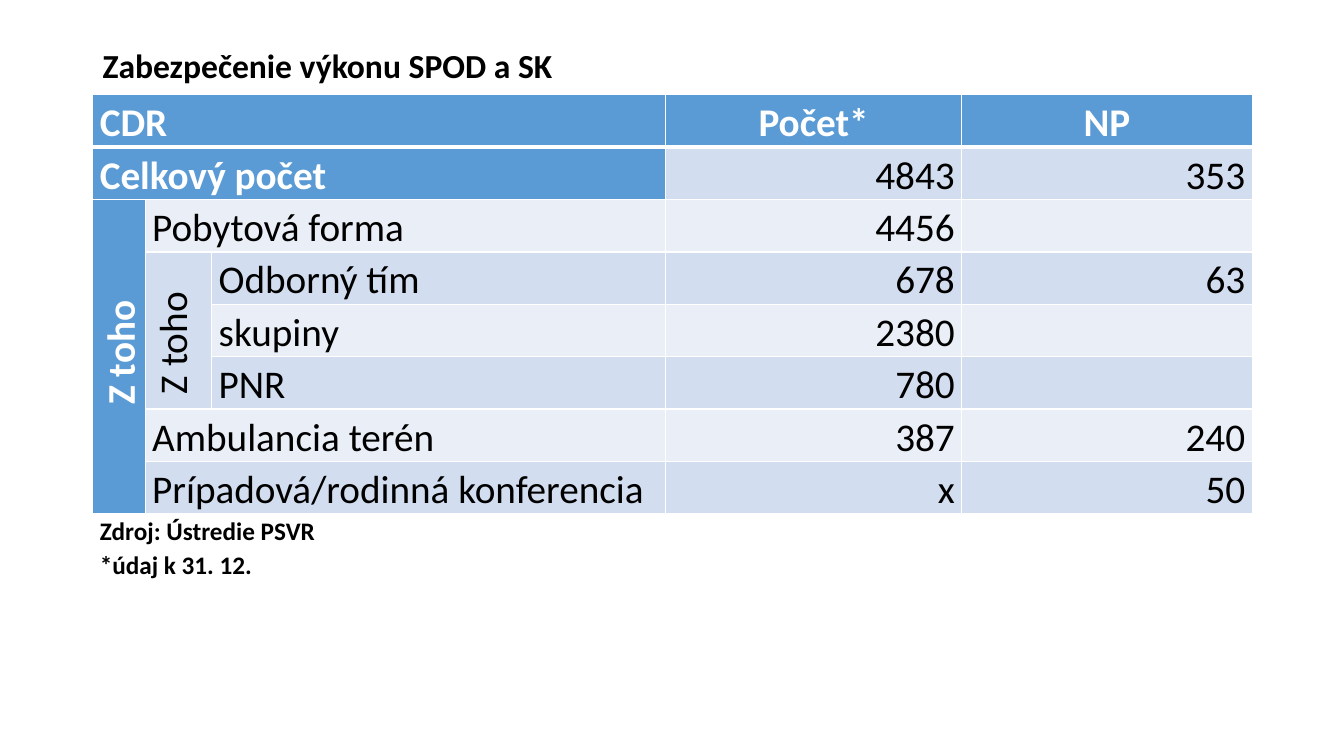
from lxml.etree import SubElement as Sub
from pptx import Presentation
from pptx.dml.color import RGBColor as RGB
from pptx.enum.text import MSO_ANCHOR as Anchor, PP_ALIGN as Align
from pptx.oxml.ns import qn
from pptx.util import Inches, Pt

BLACK = RGB(0x00, 0x00, 0x00)
WHITE = RGB(0xFF, 0xFF, 0xFF)
BLUE = RGB(0x5B, 0x9B, 0xD5)
DARK = RGB(0xD2, 0xDE, 0xEF)
LIGHT = RGB(0xEA, 0xEF, 0xF7)

LEFT, WIDTH = 0.92, 11.5
COLS = [0.52, 0.66, 4.5, 2.94, 2.88]
ROWS = [0.52] * 8 + [1.18]
# Row labels: row, column, text, rows down, columns across
LABELS = [
    (0, 0, "CDR", 1, 3),
    (1, 0, "Celkový počet", 1, 3),
    (2, 0, "Z toho", 6, 1),
    (2, 1, "Pobytová forma", 1, 2),
    (3, 1, "Z toho", 3, 1),
    (3, 2, "Odborný tím", 1, 1),
    (4, 2, "skupiny", 1, 1),
    (5, 2, "PNR", 1, 1),
    (6, 1, "Ambulancia terén", 1, 2),
    (7, 1, "Prípadová/rodinná konferencia", 1, 2),
]
COUNTS = [("Počet*", "NP"), ("4843", "353"), ("4456", ""), ("678", "63"),
          ("2380", ""), ("780", ""), ("387", "240"), ("x", "50")]
NOTES = ["Zdroj: Ústredie PSVR", "*údaj k 31. 12."]


class Deck:
    font = "Calibri"

    def __init__(self):
        self.prs = Presentation()
        self.prs.slide_width = Inches(13.33)
        self.prs.slide_height = Inches(7.5)
        self.slide = self.prs.slides.add_slide(self.prs.slide_layouts[6])

    def add_text(self, para, text, size, color=BLACK, bold=False):
        run = para.add_run()
        run.text = text
        run.font.name = self.font
        run.font.size = Pt(size)
        run.font.bold = bold
        run.font.color.rgb = color

    def title(self, text, top, height):
        box = self.slide.shapes.add_textbox(
            Inches(LEFT), Inches(top), Inches(WIDTH), Inches(height))
        frame = box.text_frame
        frame.word_wrap = True
        frame.vertical_anchor = Anchor.MIDDLE
        para = frame.paragraphs[0]
        para.line_spacing = 0.9
        self.add_text(para, text, 24, bold=True)

    def table(self, top):
        table = self.slide.shapes.add_table(
            len(ROWS), len(COLS), Inches(LEFT), Inches(top),
            Inches(WIDTH), Inches(sum(ROWS))).table
        table.first_row = table.horz_banding = False
        for col, width in zip(table.columns, COLS):
            col.width = Inches(width)
        for row, height in zip(table.rows, ROWS):
            row.height = Inches(height)
        return table

    def edge(self, cell, side, width):
        line = Sub(cell._tc.get_or_add_tcPr(), qn(f"a:ln{side}"), w=str(Pt(width)))
        fill = Sub(line, qn("a:solidFill"))
        Sub(fill, qn("a:srgbClr"), val=str(WHITE))

    def dress(self, cell, color, top=1, bottom=1):
        """Set the margins, borders and fill of a cell."""
        cell.margin_left = cell.margin_right = Inches(0.07)
        cell.margin_top = cell.margin_bottom = 0
        for side, width in zip("LRTB", (1, 1, top, bottom)):
            self.edge(cell, side, width)
        if color is None:
            cell.fill.background()
        else:
            cell.fill.solid()
            cell.fill.fore_color.rgb = color

    def fill(self, cell, lines, align, size=28, color=BLACK, bold=False):
        """Put lines into a cell, one paragraph each."""
        frame = cell.text_frame
        for i, text in enumerate(lines):
            para = frame.add_paragraph() if i else frame.paragraphs[0]
            para.alignment = align
            para.line_spacing = 1.1
            self.add_text(para, text, size, color, bold)

    def turn(self, cell):
        """Make the text of a cell read upwards."""
        cell._tc.get_or_add_tcPr().set("vert", "vert270")
        cell.text_frame.paragraphs[0]._p.get_or_add_pPr().set("marL", str(Inches(0.08)))


def shade(row, col):
    if row == len(ROWS) - 1:
        return None
    if row == 0 or col == 0 or (row == 1 and col < 3):
        return BLUE
    # The upright inner label keeps the colour of its first row
    if col == 1 and 3 <= row <= 5:
        return DARK
    return DARK if row % 2 else LIGHT


def main():
    deck = Deck()
    deck.title("Zabezpečenie výkonu SPOD a SK", 0.4, 0.54)
    table = deck.table(0.94)
    for row in range(len(ROWS)):
        for col in range(len(COLS)):
            deck.dress(table.cell(row, col), shade(row, col),
                       top=3 if row == 1 else 1, bottom=1 if row else 3)

    for row, col, text, down, across in LABELS:
        cell = table.cell(row, col)
        if down * across > 1:
            cell.merge(table.cell(row + down - 1, col + across - 1))
        head = col == 0
        align = Align.CENTER if head and down > 1 else Align.JUSTIFY
        deck.fill(cell, [text], align, color=WHITE if head else BLACK, bold=head)
        if down > 1:
            deck.turn(cell)

    for row, pair in enumerate(COUNTS):
        head = row == 0
        for col, text in enumerate(pair, 3):
            if text:
                deck.fill(table.cell(row, col), [text],
                          Align.CENTER if head else Align.RIGHT,
                          color=WHITE if head else BLACK, bold=head)

    foot = table.cell(len(ROWS) - 1, 0)
    foot.merge(table.cell(len(ROWS) - 1, len(COLS) - 1))
    deck.fill(foot, NOTES, Align.JUSTIFY, size=18, bold=True)
    deck.prs.save("out.pptx")


if __name__ == "__main__":
    main()
